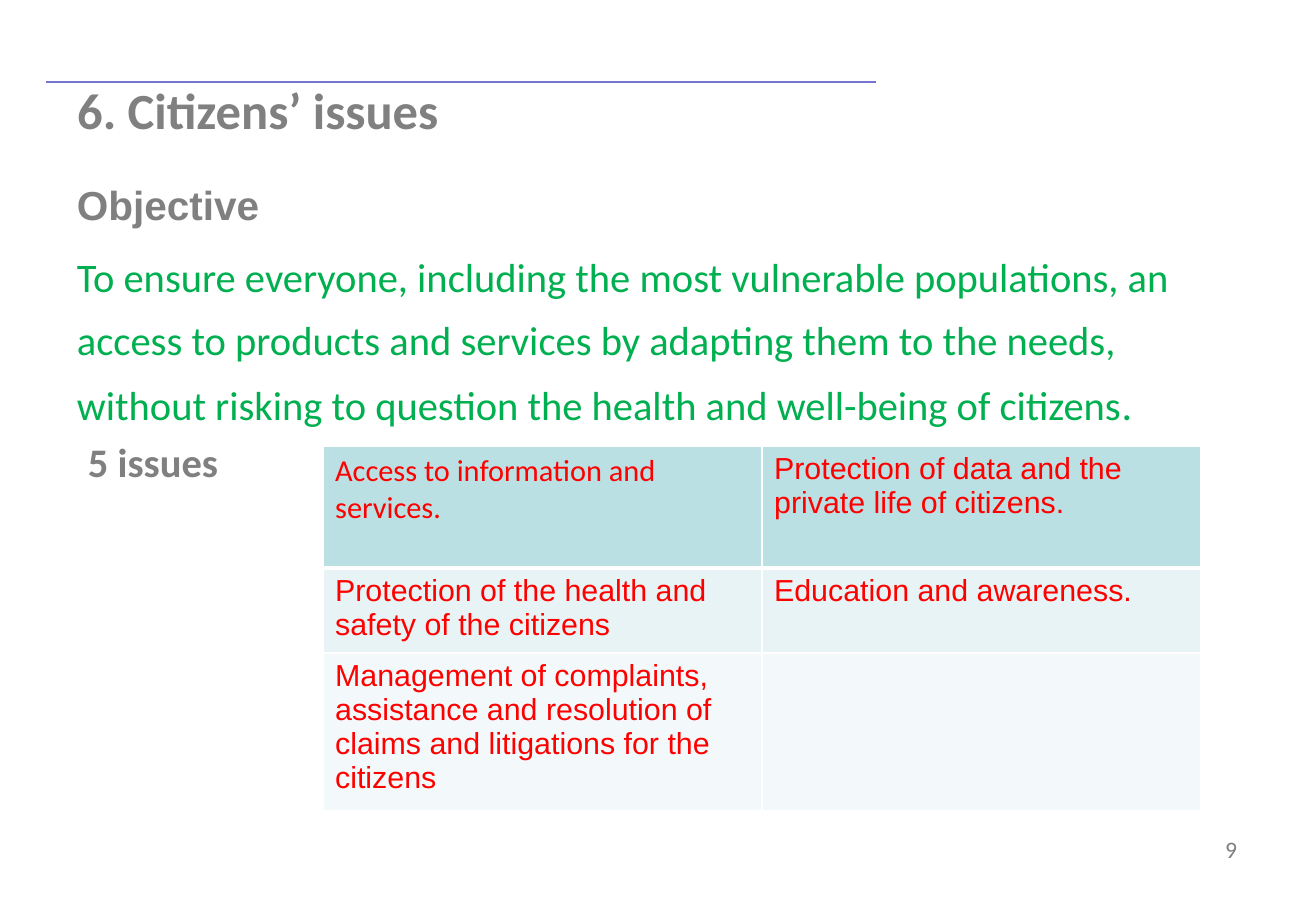
from lxml.etree import SubElement
from pptx import Presentation
from pptx.dml.color import RGBColor
from pptx.enum.shapes import MSO_CONNECTOR as Connector
from pptx.enum.text import MSO_ANCHOR as Anchor, MSO_AUTO_SIZE as AutoSize, PP_ALIGN as Align
from pptx.oxml import parse_xml
from pptx.oxml.ns import nsdecls, qn
from pptx.util import Pt

GREY, GREEN, RED, WHITE, RULE = "808080", "00B050", "FF0000", "FFFFFF", "7575D1"
HEADING = "6. Citizens’ issues"
OBJECTIVE = "Objective"
AIM = ("To ensure everyone, including the most vulnerable populations, an access to products "
       "and services by adapting them to the needs, without risking to question the health "
       "and well-being of citizens")
ISSUES_LABEL = "5 issues"
ISSUES = [
    ("Access to information and services.", "Protection of data and the private life of citizens."),
    ("Protection of the health and safety of the citizens", "Education and awareness."),
    ("Management of complaints, assistance and resolution of claims and litigations for the citizens", ""),
]
ROW_FILLS = ["BBE0E3", "E7F3F4", "F3F9FA"]
ROW_HEIGHTS = [122, 84, 147]
COLUMN_WIDTH = 439
PAGE_NUMBER = "9"


def px(length):
    return round(length * 914400 / 121.5)


def rgb(value):
    return RGBColor.from_string(value)


def write(paragraph, text, size=24, font="Calibri", color=GREY, bold=False,
          align=Align.LEFT, before=0, spacing=None):
    paragraph.alignment = align
    paragraph.space_before = Pt(before)
    if spacing:
        paragraph.line_spacing = spacing
    run = paragraph.add_run()
    run.text = text
    run.font.size = Pt(size)
    run.font.name = font
    run.font.bold = bold
    run.font.color.rgb = rgb(color)


def add_box(left, top, width, height):
    frame = slide.shapes.add_textbox(px(left), px(top), px(width), px(height)).text_frame
    frame.word_wrap = True
    return frame


def set_borders(cell, bottom):
    properties = cell._tc.get_or_add_tcPr()
    for index, (side, width) in enumerate([("L", 1), ("R", 1), ("T", 1), ("B", bottom)]):
        properties.insert(index, parse_xml(
            f'<a:ln{side} {nsdecls("a")} w="{Pt(width)}"><a:solidFill>'
            f'<a:srgbClr val="{WHITE}"/></a:solidFill></a:ln{side}>'))


deck = Presentation()
deck.slide_width, deck.slide_height = px(1316), px(911)
slide = deck.slides.add_slide(deck.slide_layouts[5])

rule = slide.shapes.add_connector(Connector.STRAIGHT, px(876), px(82), px(46), px(82))
rule.line.color.rgb = rgb(RULE)
rule.line.width = Pt(0.75)
SubElement(rule._element.spPr, qn("a:effectLst"))

heading = slide.shapes.title
heading.left, heading.top, heading.width, heading.height = px(65), px(73), px(1185), px(76)
heading.text_frame.vertical_anchor = Anchor.TOP
heading.text_frame.auto_size = AutoSize.NONE
write(heading.text_frame.paragraphs[0], HEADING, size=30, bold=True)

body = add_box(65, 160, 1185, 320)
write(body.paragraphs[0], OBJECTIVE, font="Arial", bold=True, spacing=1.3)
aim = body.add_paragraph()
write(aim, AIM, color=GREEN, before=4.8, spacing=1.3)
write(aim, ".", size=25, color=GREEN, before=4.8, spacing=1.3)
issues_label = body.add_paragraph()
write(issues_label, ISSUES_LABEL, bold=True, before=4.8)
issues_label._p.get_or_add_pPr().set("marL", str(px(11)))

write(add_box(1155, 829, 94, 67).paragraphs[0], PAGE_NUMBER, size=14, align=Align.RIGHT)

issues = slide.shapes.add_table(len(ISSUES), 2, px(323), px(446),
                                px(2 * COLUMN_WIDTH), px(sum(ROW_HEIGHTS))).table
issues.first_row = issues.horz_banding = False
for column in issues.columns:
    column.width = px(COLUMN_WIDTH)
for r, row in enumerate(ISSUES):
    issues.rows[r].height = px(ROW_HEIGHTS[r])
    for c, issue in enumerate(row):
        cell = issues.cell(r, c)
        cell.fill.solid()
        cell.fill.fore_color.rgb = rgb(ROW_FILLS[r])
        set_borders(cell, bottom=1 if r else 3)
        if issue:
            write(cell.text_frame.paragraphs[0], issue, size=18, color=RED,
                  font="Arial" if r or c else "Calibri")

deck.save("out.pptx")
